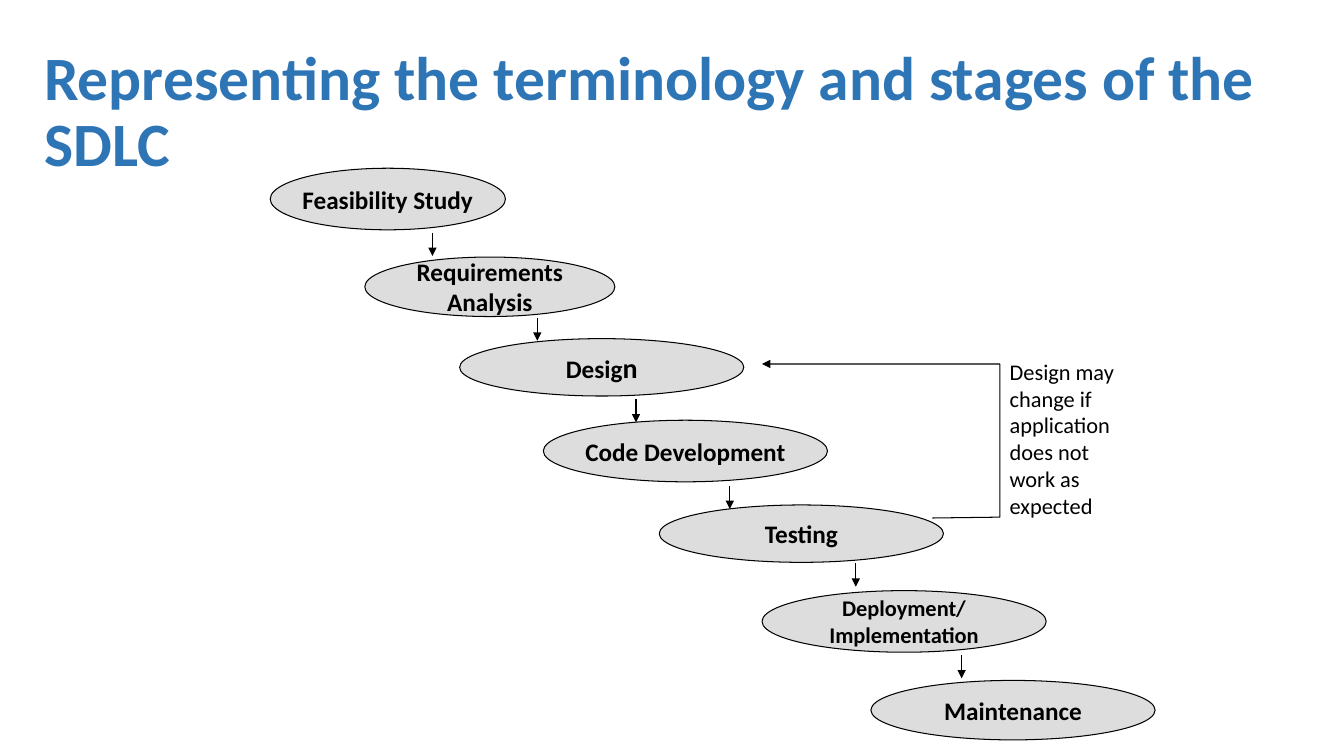
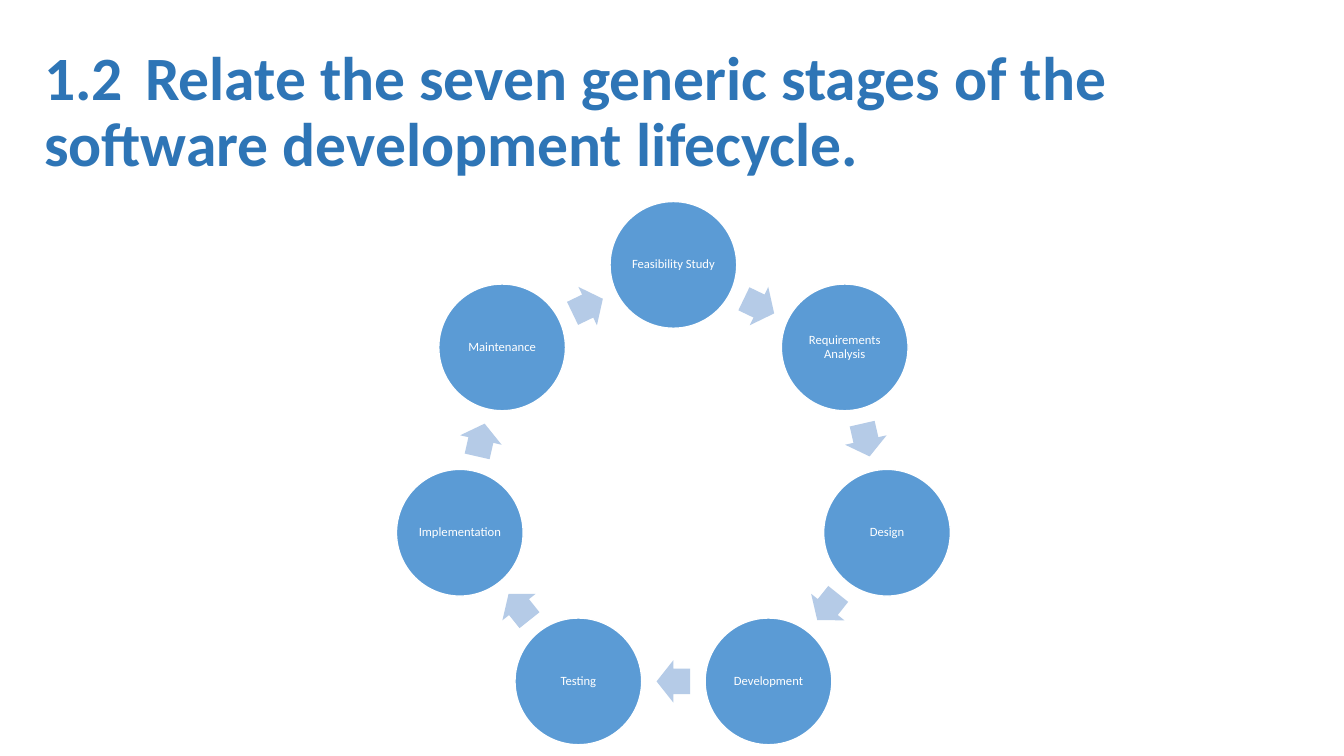
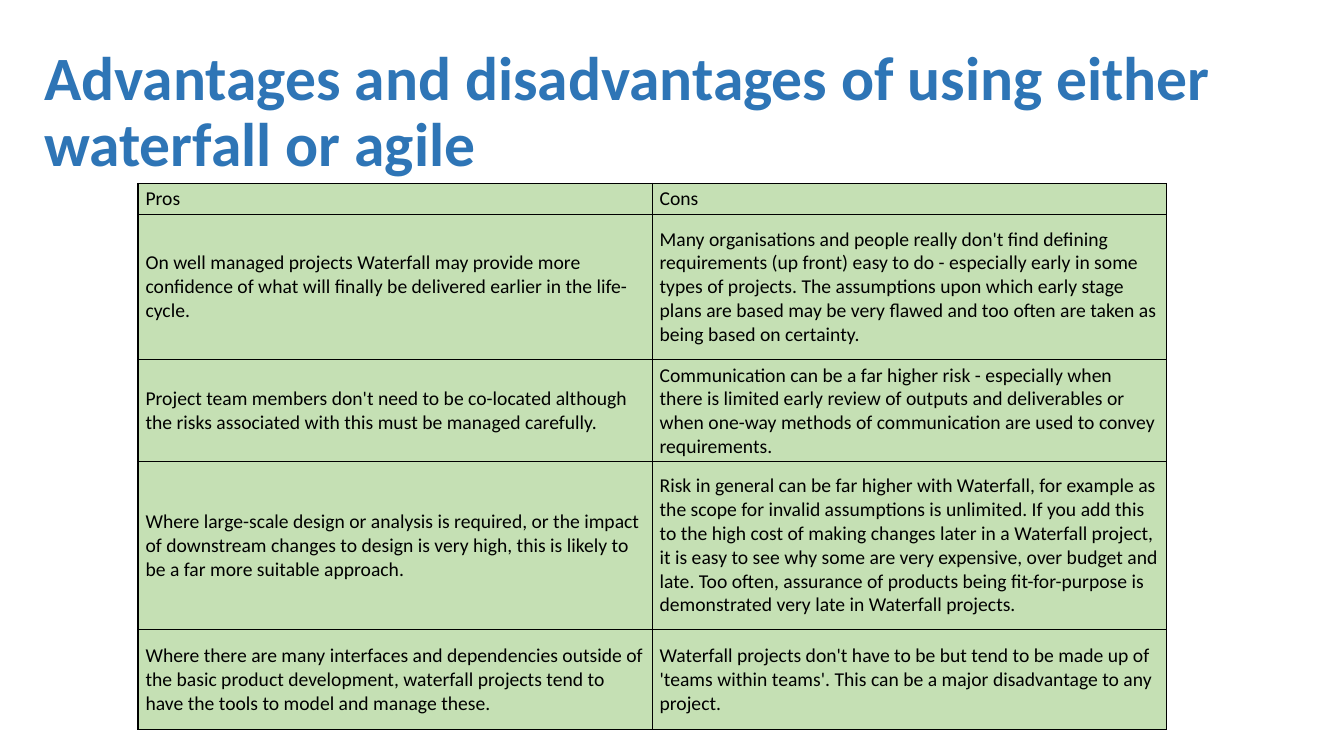
from math import cos, pi, sin

from lxml import etree
from pptx import Presentation
from pptx.dml.color import RGBColor
from pptx.enum.shapes import MSO_CONNECTOR, MSO_SHAPE
from pptx.enum.text import MSO_ANCHOR, PP_ALIGN
from pptx.oxml.ns import qn
from pptx.util import Pt

ELLIPSE, RIGHT_ARROW = MSO_SHAPE.OVAL, MSO_SHAPE.RIGHT_ARROW
STRAIGHT = MSO_CONNECTOR.STRAIGHT
MIDDLE, TOP = MSO_ANCHOR.MIDDLE, MSO_ANCHOR.TOP
CENTER, LEFT = PP_ALIGN.CENTER, PP_ALIGN.LEFT

FONT = "Calibri"
BLACK = RGBColor(0x00, 0x00, 0x00)
WHITE = RGBColor(0xFF, 0xFF, 0xFF)
TITLE_BLUE = RGBColor(0x2E, 0x75, 0xB6)
CIRCLE_BLUE = RGBColor(0x5B, 0x9B, 0xD5)
ARROW_BLUE = RGBColor(0xB5, 0xCB, 0xE7)
STAGE_GREY = RGBColor(0xDD, 0xDD, 0xDD)
CELL_GREEN = RGBColor(0xC5, 0xE0, 0xB4)

# Content: waterfall stages as (lines of (text, size) spans, left, top, width, height)
WATERFALL_TITLE = "Representing the terminology and stages of the SDLC"
STAGES = [
    ([[("Feasibility Study", 18)]], 193, 120.2, 168, 44),
    ([[("Requirements", 18)], [("Analysis", 18)]], 260.6, 183.6, 178.6, 42.5),
    ([[("Desig", 18), ("n", 20)]], 328.3, 241.9, 203, 41),
    ([[("Code Development", 18)]], 388.1, 300.2, 203, 44),
    ([[("Testing", 18)]], 470.9, 360.7, 203, 41),
    ([[("Deployment/", 16)], [("Implementation", 16)]], 544.3, 421.9, 203, 44),
    ([[("Maintenance", 18)]], 622.1, 486, 203, 42.5),
]
STEP_STARTS = [(308.9, 166.3), (383.8, 226.8), (454.3, 285.1),
               (521.3, 347), (611.3, 402.5), (686.9, 468)]
STEP_LENGTH = 16.6
FEEDBACK_ROUTE = [(666, 370), (714.2, 369.4), (714.2, 260), (544.3, 260)]
FEEDBACK_NOTE = "Design may change if application does not work as expected"

# Content: lifecycle ring
CYCLE_TITLE = "1.2\tRelate the seven generic stages of the software development lifecycle."
CYCLE = ["Feasibility Study", "Requirements Analysis", "Design", "Development",
         "Testing", "Implementation", "Maintenance"]
RING_X, RING_Y, RING_RADIUS = 481, 345.7, 156.5
CIRCLE_SIZE = 90.5
ARROW_LENGTH, ARROW_WIDTH = 24, 30.4

# Content: pros and cons
TABLE_TITLE = "Advantages and disadvantages of using either waterfall or agile"
PROS_CONS = [
    ("Pros", "Cons"),
    ("On well managed projects Waterfall may provide more confidence of what will "
     "finally be delivered earlier in the life-cycle.",
     "Many organisations and people really don't find defining requirements (up front) "
     "easy to do - especially early in some types of projects. The assumptions upon "
     "which early stage plans are based may be very flawed and too often are taken as "
     "being based on certainty."),
    ("Project team members don't need to be co-located although the risks associated "
     "with this must be managed carefully.",
     "Communication can be a far higher risk - especially when there is limited early "
     "review of outputs and deliverables or when one-way methods of communication are "
     "used to convey requirements."),
    ("Where large-scale design or analysis is required, or the impact of downstream "
     "changes to design is very high, this is likely to be a far more suitable approach.",
     "Risk in general can be far higher with Waterfall, for example as the scope for "
     "invalid assumptions is unlimited. If you add this to the high cost of making "
     "changes later in a Waterfall project, it is easy to see why some are very "
     "expensive, over budget and late. Too often, assurance of products being "
     "fit-for-purpose is demonstrated very late in Waterfall projects."),
    ("Where there are many interfaces and dependencies outside of the basic product "
     "development, waterfall projects tend to have the tools to model and manage these.",
     "Waterfall projects don't have to be but tend to be made up of 'teams within "
     "teams'. This can be a major disadvantage to any project."),
]
ROW_HEIGHTS = [21.6, 103.7, 71.3, 120.2, 71.3]
COLUMN_WIDTH = 367.2
TABLE_LEFT, TABLE_TOP = 98.6, 131


def write(frame, lines, color, bold=False, align=LEFT, anchor=MIDDLE, spacing=None):
    """Fill a text frame; each line is a list of (text, size) spans."""
    frame.vertical_anchor = anchor
    for index, line in enumerate(lines):
        para = frame.add_paragraph() if index else frame.paragraphs[0]
        para.alignment = align
        para.line_spacing = spacing
        for text, size in line:
            span = para.add_run()
            span.text = text
            font = span.font
            font.name, font.size, font.bold = FONT, Pt(size), bold
            font.color.rgb = color


def add_text(page, box, lines, color, **style):
    frame = page.shapes.add_textbox(*map(Pt, box)).text_frame
    frame.word_wrap = True
    write(frame, lines, color, **style)


def add_filled(page, kind, box, fill, line=None, width=1):
    shape = page.shapes.add_shape(kind, *map(Pt, box))
    shape.shadow.inherit = False
    shape.fill.solid()
    shape.fill.fore_color.rgb = fill
    if line is None:
        shape.line.fill.background()
    else:
        shape.line.color.rgb = line
        shape.line.width = Pt(width)
    return shape


def style_arrow(arrow):
    """Thin black line with a triangle at its end and no shadow."""
    arrow.line.color.rgb = BLACK
    arrow.line.width = Pt(0.75)
    properties = arrow.element.spPr
    etree.SubElement(properties.find(qn("a:ln")), qn("a:tailEnd"), type="triangle")
    if properties.find(qn("a:effectLst")) is None:
        etree.SubElement(properties, qn("a:effectLst"))


def add_page(deck, title):
    page = deck.slides.add_slide(deck.slide_layouts[6])
    add_text(page, (24.5, 28.8, 913, 104.4), [[(title, 44)]], TITLE_BLUE,
             bold=True, spacing=0.9)
    return page


def build_waterfall(deck):
    page = add_page(deck, WATERFALL_TITLE)
    for lines, *box in STAGES:
        stage = add_filled(page, ELLIPSE, box, STAGE_GREY, BLACK, 0.75)
        stage.text_frame.word_wrap = False
        write(stage.text_frame, lines, BLACK, bold=True, align=CENTER)
    for x, y in STEP_STARTS:
        style_arrow(page.shapes.add_connector(
            STRAIGHT, Pt(x), Pt(y), Pt(x), Pt(y + STEP_LENGTH)))

    # Feedback loop from testing to design
    start, *corners = [(Pt(x), Pt(y)) for x, y in FEEDBACK_ROUTE]
    builder = page.shapes.build_freeform(*start)
    builder.add_line_segments(corners, close=False)
    loop = builder.convert_to_shape()
    loop.shadow.inherit = False
    loop.fill.background()
    style_arrow(loop)
    add_text(page, (714.2, 252, 105.8, 123.8), [[(FEEDBACK_NOTE, 16)]], BLACK, anchor=TOP)


def ring_box(angle, radius, width, height):
    """Box centred on the ring, the angle running clockwise from the top."""
    x, y = RING_X + radius * sin(angle), RING_Y - radius * cos(angle)
    return x - width / 2, y - height / 2, width, height


def build_cycle(deck):
    page = add_page(deck, CYCLE_TITLE)
    step = 2 * pi / len(CYCLE)
    for index, name in enumerate(CYCLE):
        circle = add_filled(page, ELLIPSE, ring_box(
            index * step, RING_RADIUS, CIRCLE_SIZE, CIRCLE_SIZE), CIRCLE_BLUE, WHITE)
        frame = circle.text_frame
        frame.word_wrap = True
        frame.margin_left = frame.margin_right = Pt(0.9)
        frame.margin_top = frame.margin_bottom = Pt(0.9)
        write(frame, [[(name, 9)]], WHITE, align=CENTER, spacing=0.9)

        # Arrow halfway to the next circle
        turn = index + 0.5
        arrow = add_filled(page, RIGHT_ARROW, ring_box(
            turn * step, RING_RADIUS * cos(step / 2), ARROW_LENGTH, ARROW_WIDTH), ARROW_BLUE)
        arrow.adjustments[0], arrow.adjustments[1] = 0.6, 0.5
        arrow.rotation = turn * 360 / len(CYCLE)


def add_borders(cell):
    properties = cell._tc.get_or_add_tcPr()
    for index, side in enumerate(("a:lnL", "a:lnR", "a:lnT", "a:lnB")):
        border = etree.Element(qn(side), w=str(Pt(1)))
        fill = etree.SubElement(border, qn("a:solidFill"))
        etree.SubElement(fill, qn("a:srgbClr"), val=str(BLACK))
        properties.insert(index, border)


def build_table(deck):
    page = add_page(deck, TABLE_TITLE)
    table = page.shapes.add_table(
        len(PROS_CONS), 2, Pt(TABLE_LEFT), Pt(TABLE_TOP),
        Pt(2 * COLUMN_WIDTH), Pt(sum(ROW_HEIGHTS))).table
    for column in table.columns:
        column.width = Pt(COLUMN_WIDTH)
    for row, height, texts in zip(table.rows, ROW_HEIGHTS, PROS_CONS):
        row.height = Pt(height)
        for cell, text in zip(row.cells, texts):
            cell.fill.solid()
            cell.fill.fore_color.rgb = CELL_GREEN
            cell.margin_left = cell.margin_right = Pt(5.4)
            cell.margin_top = cell.margin_bottom = Pt(2.7)
            cell.vertical_anchor = MIDDLE
            write(cell.text_frame, [[(text, 14)]], BLACK, anchor=None)
            add_borders(cell)


def main():
    deck = Presentation()
    deck.slide_width, deck.slide_height = Pt(960), Pt(540)
    build_waterfall(deck)
    build_cycle(deck)
    build_table(deck)
    deck.save("out.pptx")


if __name__ == "__main__":
    main()
